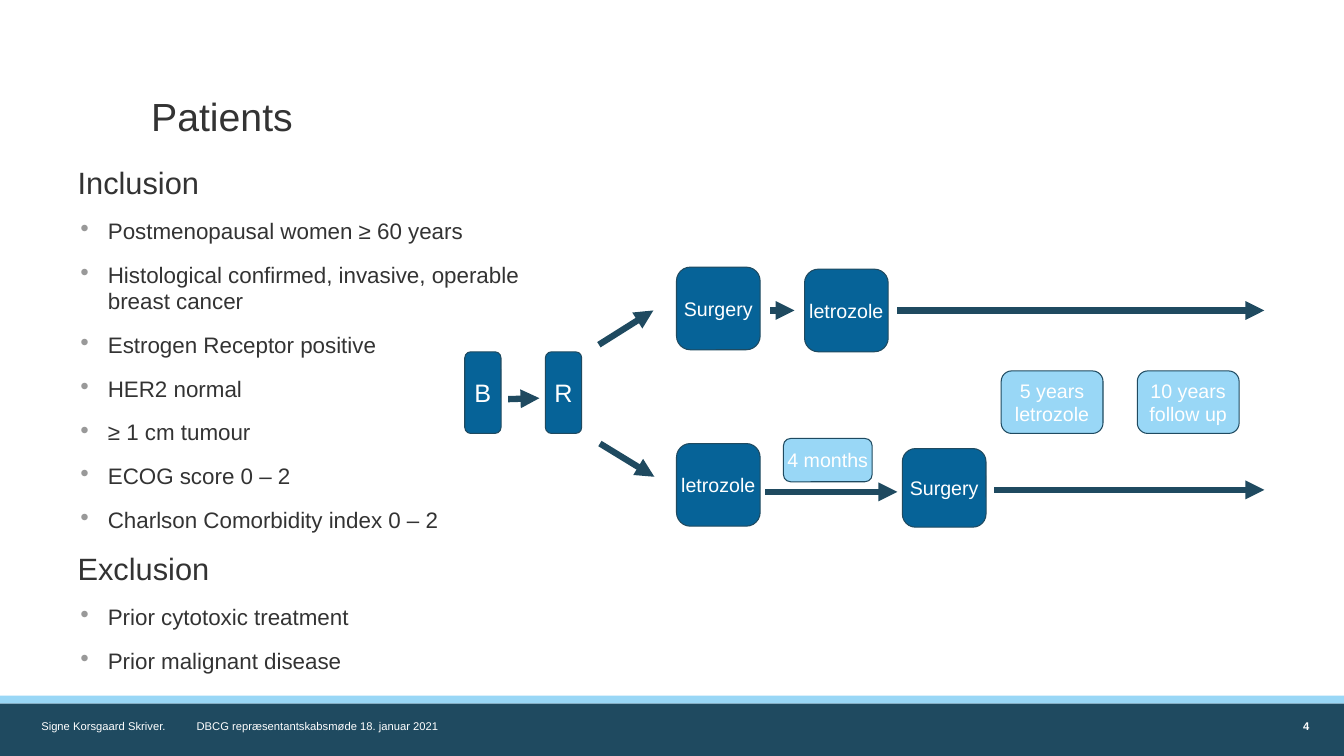
"""Build the Patients slide: criteria lists beside a two-arm trial flow."""
from lxml import etree
from pptx import Presentation
from pptx.dml.color import RGBColor
from pptx.enum import shapes, text
from pptx.oxml import ns
from pptx.util import Inches, Pt

NAVY = RGBColor(0x1F, 0x4A, 0x60)
BLUE = RGBColor(0x06, 0x63, 0x98)
SKY = RGBColor(0x99, 0xD7, 0xF6)
INK = RGBColor(0x33, 0x33, 0x33)
WHITE = RGBColor(0xFF, 0xFF, 0xFF)
BULLET_GREY = "999999"

FOOTER = "Signe Korsgaard Skriver.\tDBCG repræsentantskabsmøde 18. januar 2021"
CRITERIA = [
    ("Inclusion", (0.77, 1.62, 4.72, 3.83), [
        "Postmenopausal women ≥ 60 years",
        "Histological confirmed, invasive, operable breast cancer",
        "Estrogen Receptor positive",
        "HER2 normal",
        "≥ 1 cm tumour",
        "ECOG score 0 – 2",
        "Charlson Comorbidity index 0 – 2",
    ]),
    ("Exclusion", (0.77, 5.45, 3.14, 1.29), [
        "Prior cytotoxic treatment",
        "Prior malignant disease",
    ]),
]
BANDS = [((0, 6.9, 13.33, 0.08), SKY), ((0, 6.98, 13.33, 0.52), NAVY)]
BOXES = [
    (["B"], (4.61, 3.49, 0.36, 0.81), BLUE, 18),
    (["R"], (5.41, 3.49, 0.36, 0.81), BLUE, 18),
    (["Surgery"], (6.71, 2.65, 0.83, 0.82), BLUE, 14),
    (["letrozole"], (7.98, 2.67, 0.83, 0.82), BLUE, 14),
    (["letrozole"], (6.71, 4.4, 0.83, 0.82), BLUE, 14),
    (["Surgery"], (8.95, 4.45, 0.83, 0.78), BLUE, 14),
    (["4 months"], (7.77, 4.35, 0.88, 0.43), SKY, 14),
    (["5 years", "letrozole"], (9.93, 3.68, 1.01, 0.62), SKY, 14),
    (["10 years", "follow up"], (11.28, 3.68, 1.01, 0.62), SKY, 14),
]
ARROWS = [
    (5.04, 3.96, 5.35, 3.95),
    (5.94, 3.42, 6.48, 3.08),
    (5.95, 4.4, 6.49, 4.73),
    (7.64, 3.08, 7.88, 3.08),
    (8.9, 3.08, 12.54, 3.08),
    (7.59, 4.88, 8.9, 4.88),
    (9.86, 4.86, 12.54, 4.86),
]


def set_bullet(p):
    pPr = p._p.get_or_add_pPr()
    pPr.set("marL", str(Inches(0.3)))
    pPr.set("indent", str(-Inches(0.3)))
    color = etree.SubElement(pPr, ns.qn("a:buClr"))
    etree.SubElement(color, ns.qn("a:srgbClr"), val=BULLET_GREY)
    etree.SubElement(pPr, ns.qn("a:buChar"), char="∙")


def set_tab(p, pos):
    tabs = etree.SubElement(p._p.get_or_add_pPr(), ns.qn("a:tabLst"))
    etree.SubElement(tabs, ns.qn("a:tab"), pos=str(Inches(pos)), algn="l")


def write(sp, lines, size, color=INK, bold=False, align=None, anchor=text.MSO_ANCHOR.TOP,
          wrap=True, spacing=None, after=None, bullet_size=None, tab=None):
    """Fill a shape; with bullet_size, lines after the first become bullets."""
    tf = sp.text_frame
    tf.word_wrap = wrap
    tf.vertical_anchor = anchor
    tf.margin_left = tf.margin_right = tf.margin_top = tf.margin_bottom = 0
    for i, line in enumerate(lines):
        p = tf.paragraphs[0] if i == 0 else tf.add_paragraph()
        bulleted = bullet_size and i > 0
        if align is not None:
            p.alignment = align
        if spacing:
            p.line_spacing = spacing
        if after:
            p.space_after = Pt(after)
        if bulleted:
            set_bullet(p)
        if tab:
            set_tab(p, tab)
        r = p.add_run()
        r.text = line
        r.font.name = "Arial"
        r.font.size = Pt(bullet_size if bulleted else size)
        r.font.bold = bold
        r.font.color.rgb = color


def add_textbox(s, box, lines, size, **fmt):
    write(s.shapes.add_textbox(*map(Inches, box)), lines, size, **fmt)


def add_box(s, kind, box, fill, outlined=False):
    sp = s.shapes.add_shape(kind, *map(Inches, box))
    sp.shadow.inherit = False
    sp.fill.solid()
    sp.fill.fore_color.rgb = fill
    if outlined:
        sp.line.color.rgb = NAVY
        sp.line.width = Pt(0.75)
    else:
        sp.line.fill.background()
    return sp


def add_arrow(s, ends):
    c = s.shapes.add_connector(shapes.MSO_CONNECTOR.STRAIGHT, *map(Inches, ends))
    c.line.color.rgb = NAVY
    c.line.width = Pt(4.5)
    etree.SubElement(c.line._get_or_add_ln(), ns.qn("a:tailEnd"), type="triangle")
    etree.SubElement(c._element.spPr, ns.qn("a:effectLst"))


def main():
    prs = Presentation()
    prs.slide_width, prs.slide_height = Inches(13.33), Inches(7.5)
    s = prs.slides.add_slide(prs.slide_layouts[6])
    center = text.PP_ALIGN.CENTER

    for box, fill in BANDS:
        add_box(s, shapes.MSO_SHAPE.RECTANGLE, box, fill)
    add_textbox(s, (0.41, 7.14, 8.06, 0.2), [FOOTER], 8, color=WHITE, tab=1.54)
    add_textbox(s, (12.58, 7.14, 0.75, 0.2), ["4"], 8, color=WHITE, bold=True, align=center)
    add_textbox(s, (1.5, 0.95, 11.09, 0.43), ["Patients"], 28, spacing=0.85,
                anchor=text.MSO_ANCHOR.BOTTOM)
    for heading, box, items in CRITERIA:
        add_textbox(s, box, [heading] + items, 22, after=12, bullet_size=16)

    for ends in ARROWS:
        add_arrow(s, ends)
    for lines, box, fill, size in BOXES:
        sp = add_box(s, shapes.MSO_SHAPE.ROUNDED_RECTANGLE, box, fill, outlined=True)
        write(sp, lines, size, color=WHITE, align=center,
              anchor=text.MSO_ANCHOR.MIDDLE, wrap=False)

    prs.save("out.pptx")


if __name__ == "__main__":
    main()
